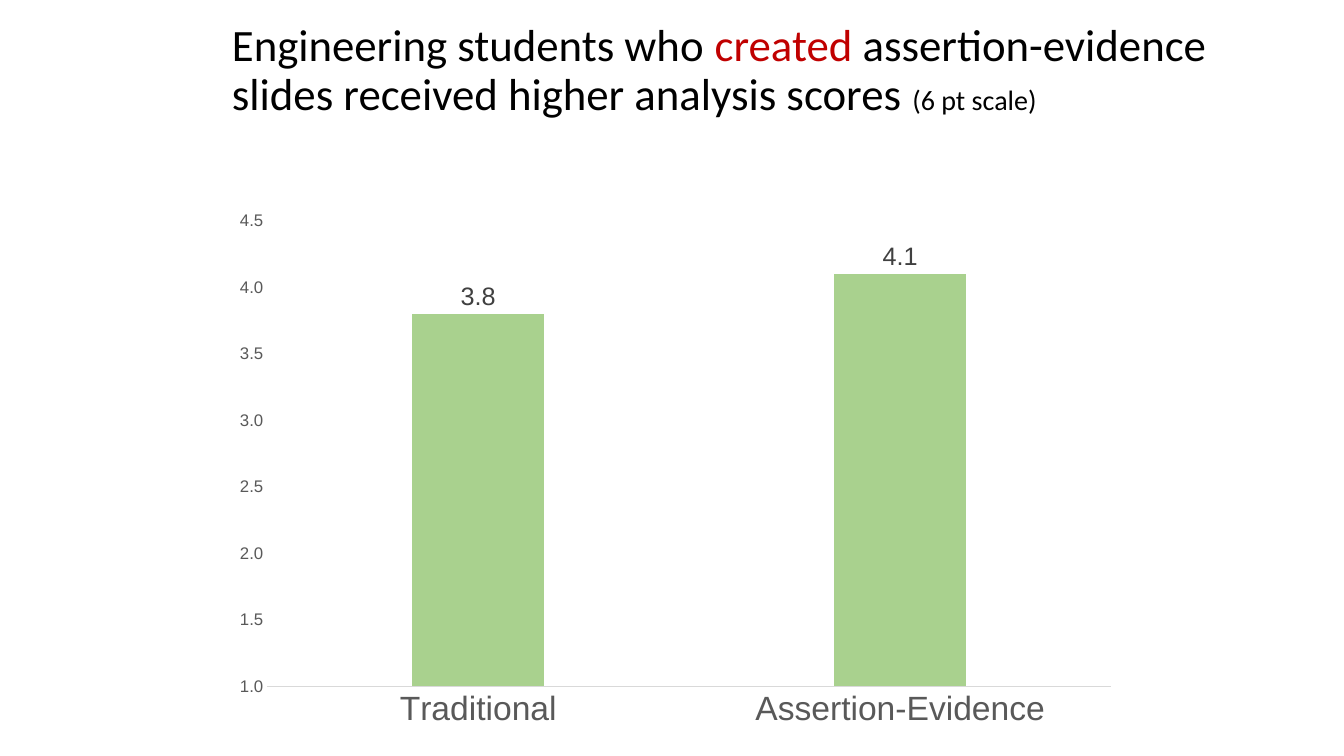
from pptx import Presentation
from pptx.chart.data import CategoryChartData
from pptx.dml.color import RGBColor
from pptx.enum.chart import XL_CHART_TYPE, XL_LABEL_POSITION, XL_TICK_MARK
from pptx.enum.text import MSO_ANCHOR, MSO_AUTO_SIZE, PP_ALIGN
from pptx.util import Inches, Pt

COLUMNS = XL_CHART_TYPE.COLUMN_CLUSTERED
OUTSIDE_END = XL_LABEL_POSITION.OUTSIDE_END
NO_TICK = XL_TICK_MARK.NONE
MIDDLE = MSO_ANCHOR.MIDDLE
NO_FIT = MSO_AUTO_SIZE.NONE
LEFT = PP_ALIGN.LEFT

WIDTH, HEIGHT = 13.33, 7.5
MARGIN = 2.2
TITLE_BOX = (MARGIN, 0.17, 9.99, 1.08)
CHART_BOX = (MARGIN, 2, 9, 5.33)
BLACK, RED, GREEN = "000000", "C00000", "A9D18E"
GRAY, DARK_GRAY, LIGHT_GRAY = "595959", "404040", "D9D9D9"

TITLE_RUNS = [
    ("Engineering students who ", 32, BLACK),
    ("created", 32, RED),
    (" assertion-evidence slides received higher analysis scores ", 32, BLACK),
    ("(6 pt scale)", 20, BLACK),
]
SCORES = {"Traditional": 3.8, "Assertion-Evidence": 4.1}


def rgb(value):
    return RGBColor.from_string(value)


def set_font(font, name, size, color):
    for key, value in {"name": name, "size": Pt(size), "bold": False}.items():
        setattr(font, key, value)
    font.color.rgb = rgb(color)


def add_title(s, box):
    title = s.shapes.title
    title.left, title.top, title.width, title.height = map(Inches, box)
    tf = title.text_frame
    frame_format = {
        "word_wrap": True, "auto_size": NO_FIT, "vertical_anchor": MIDDLE,
        "margin_left": Inches(0.1), "margin_right": Inches(0.1),
        "margin_top": Inches(0.05), "margin_bottom": Inches(0.05),
    }
    for key, value in frame_format.items():
        setattr(tf, key, value)
    p = tf.paragraphs[0]
    p.alignment, p.line_spacing = LEFT, 0.9
    for text, size, color in TITLE_RUNS:
        r = p.add_run()
        r.text = text
        set_font(r.font, "Calibri", size, color)


def add_score_chart(s, box):
    data = CategoryChartData(number_format="0.0")
    data.categories = list(SCORES)
    data.add_series("Series 1", list(SCORES.values()))
    chart = s.shapes.add_chart(COLUMNS, *map(Inches, box), data).chart
    chart.has_legend = chart.has_title = False
    set_font(chart.font, "Arial", 10, BLACK)

    # Axes
    for axis, size in ((chart.category_axis, 24), (chart.value_axis, 12)):
        axis.has_major_gridlines = False
        axis.major_tick_mark = axis.minor_tick_mark = NO_TICK
        set_font(axis.tick_labels.font, "Arial", size, GRAY)
    line = chart.category_axis.format.line
    line.color.rgb, line.width = rgb(LIGHT_GRAY), Pt(0.75)
    scale = chart.value_axis
    scale.minimum_scale = 1
    scale.format.line.fill.background()
    scale.tick_labels.number_format = "0.0"
    scale.tick_labels.number_format_is_linked = False

    # Columns and their values
    plot = chart.plots[0]
    plot.gap_width, plot.overlap, plot.vary_by_categories = 219, -27, False
    fill = plot.series[0].format.fill
    fill.solid()
    fill.fore_color.rgb = rgb(GREEN)
    labels = plot.series[0].data_labels
    label_format = {
        "show_value": True, "position": OUTSIDE_END,
        "number_format": "0.0", "number_format_is_linked": False,
    }
    for key, value in label_format.items():
        setattr(labels, key, value)
    set_font(labels.font, "Arial", 18, DARK_GRAY)


def main():
    prs = Presentation()
    prs.slide_width, prs.slide_height = Inches(WIDTH), Inches(HEIGHT)
    s = prs.slides.add_slide(prs.slide_layouts[5])
    add_title(s, TITLE_BOX)
    add_score_chart(s, CHART_BOX)
    prs.save("out.pptx")


if __name__ == "__main__":
    main()
